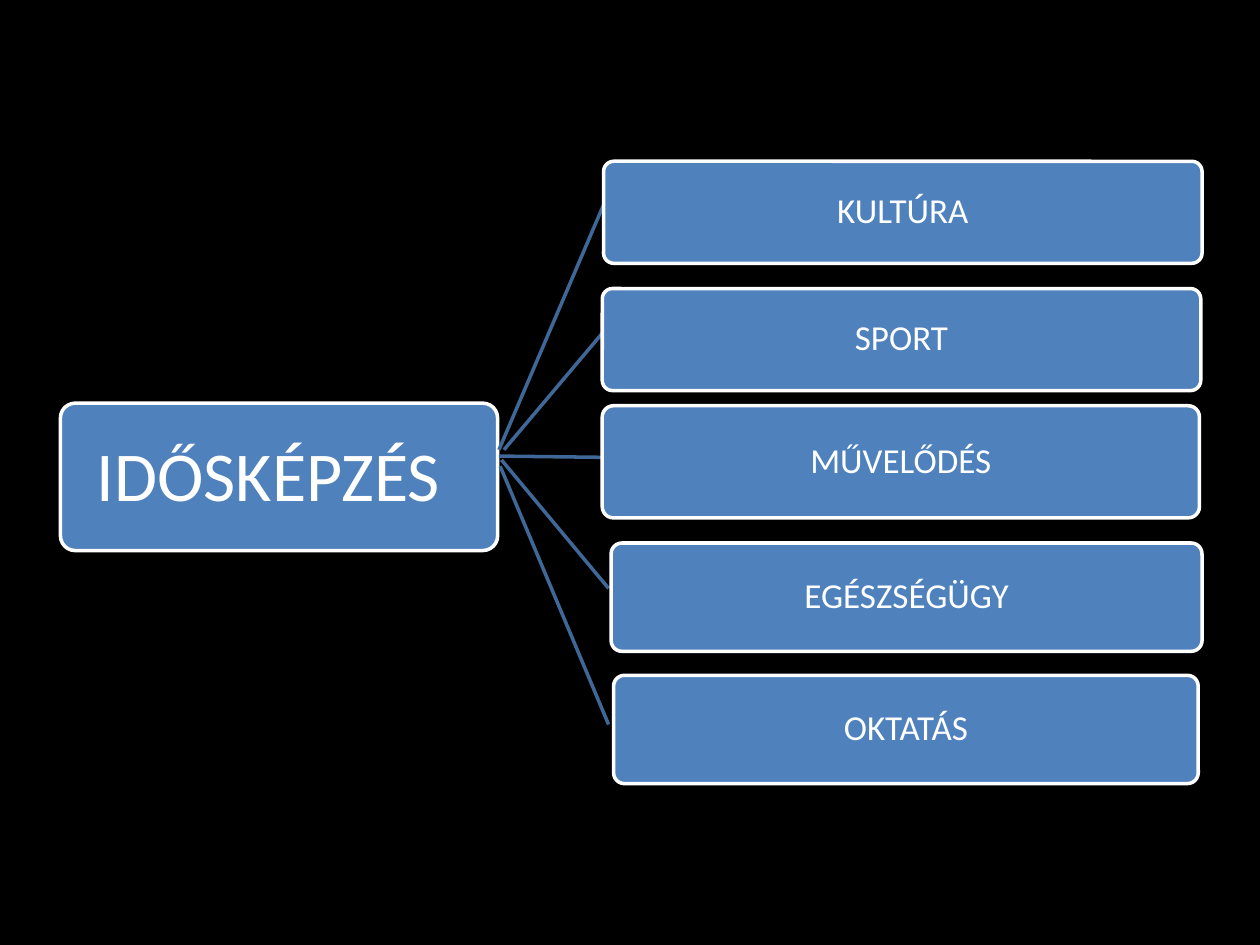
from pptx import Presentation
from pptx import util as u
from pptx.dml.color import RGBColor
from pptx.enum import shapes, text
from pptx.oxml.ns import qn
from lxml import etree

BLACK, WHITE, BLUE, DARK_BLUE = "000000", "FFFFFF", "4F81BD", "3F6797"
ROOT = ("IDŐSKÉPZÉS", (0.48, 3.2, 3.47, 1.17))
BRANCHES = [
    ("KULTÚRA", (4.79, 1.28, 4.75, 0.81), (3.96, 3.57, 4.81, 1.58)),
    ("SPORT", (4.78, 2.29, 4.75, 0.81), (4, 3.57, 4.86, 2.55)),
    ("MŰVELŐDÉS", (4.78, 3.22, 4.74, 0.89), (3.96, 3.62, 4.81, 3.63)),
    ("EGÉSZSÉGÜGY", (4.85, 4.31, 4.69, 0.86), (3.98, 3.65, 4.83, 4.67)),
    ("OKTATÁS", (4.87, 5.36, 4.64, 0.86), (3.97, 3.7, 4.83, 5.75)),
]


def paint(fmt, color):
    fmt.solid()
    fmt.fore_color.rgb = RGBColor.from_string(color)


def outline(line, color):
    paint(line.fill, color)
    line.width = u.Pt(2)


def write(sp, content, size=20, color=WHITE, font="Calibri", insets=(0.03,) * 4):
    tf = sp.text_frame
    tf.word_wrap = True
    tf.vertical_anchor = text.MSO_ANCHOR.MIDDLE
    tf.margin_left, tf.margin_top, tf.margin_right, tf.margin_bottom = map(u.Inches, insets)
    p = tf.paragraphs[0]
    p.alignment = text.PP_ALIGN.CENTER
    p.line_spacing = 0.9
    r = p.add_run()
    r.text = content
    r.font.name, r.font.size = font, u.Pt(size)
    r.font.color.rgb = RGBColor.from_string(color)


def add_box(s, content, place, **style):
    sp = s.shapes.add_shape(shapes.MSO_SHAPE.ROUNDED_RECTANGLE, *map(u.Inches, place))
    sp.adjustments[0] = 0.1
    sp.shadow.inherit = False
    paint(sp.fill, BLUE)
    outline(sp.line, WHITE)
    write(sp, content, **style)


def add_link(s, ends):
    link = s.shapes.add_connector(shapes.MSO_CONNECTOR.STRAIGHT, *map(u.Inches, ends))
    outline(link.line, DARK_BLUE)
    etree.SubElement(link._element.spPr, qn("a:effectLst"))


def main():
    """Build the slide that links one topic to its five fields."""
    prs = Presentation()
    prs.slide_width, prs.slide_height = u.Inches(10), u.Inches(7.5)
    s = prs.slides.add_slide(prs.slide_layouts[6])
    paint(s.background.fill, BLACK)
    add_box(s, *ROOT, size=40, insets=(0.18, 0.09, 0.35, 0.06))
    for label, place, ends in BRANCHES:
        add_link(s, ends)
        add_box(s, label, place)
    prs.save("out.pptx")


if __name__ == "__main__":
    main()
